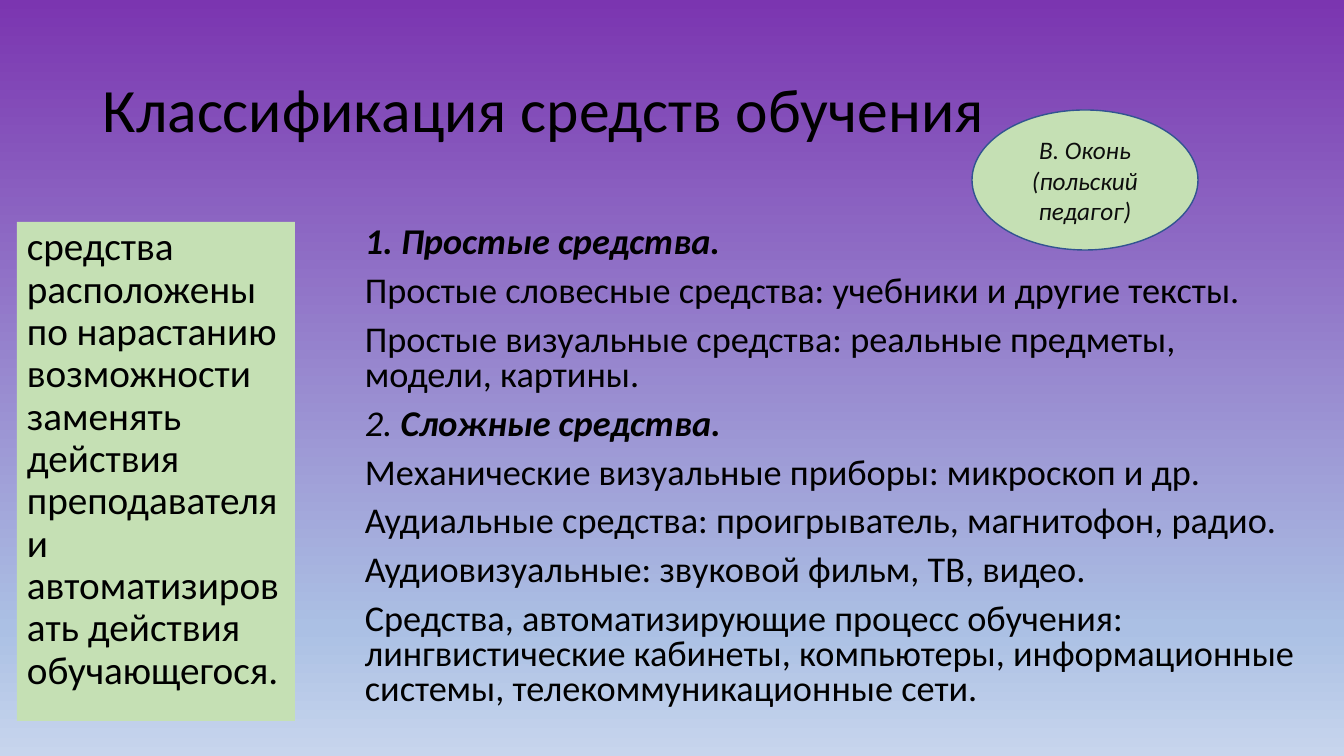
from dataclasses import dataclass

from lxml import etree
from pptx import Presentation
from pptx import util as u
from pptx.dml.color import RGBColor
from pptx.enum import shapes, text
from pptx.oxml.ns import qn

EMU_PER_PX = 12192000 / 1344


@dataclass(frozen=True)
class Theme:
    font: str = "Calibri"
    ink: str = "000000"
    soft_ink: str = "0D0D0D"
    panel: str = "C5E0B4"
    outline: str = "325491"
    backdrop: tuple = ((0, "7B35B0"), (83, "ABC0E4"), (100, "C7D5ED"))
    title_size: float = 44
    panel_size: float = 28
    list_size: float = 25.9
    author_size: float = 18


def px(*lengths):
    return [u.Emu(round(n * EMU_PER_PX)) for n in lengths]


def write(frame, paragraphs, *, font, size, color, align=text.PP_ALIGN.LEFT,
          anchor=text.MSO_ANCHOR.TOP, line=1.0, before=0):
    """Fill a frame; each paragraph is a list of (words, style), style from "b" and "i"."""
    frame.word_wrap = True
    frame.vertical_anchor = anchor
    for index, runs in enumerate(paragraphs):
        paragraph = frame.paragraphs[0] if index == 0 else frame.add_paragraph()
        paragraph.alignment = align
        paragraph.line_spacing = line
        paragraph.space_before = u.Pt(before)
        for words, style in runs:
            run = paragraph.add_run()
            run.text = words
            run.font.name = font
            run.font.size = u.Pt(size)
            run.font.color.rgb = RGBColor.from_string(color)
            run.font.bold = "b" in style
            run.font.italic = "i" in style


class SlideBuilder:
    def __init__(self, slide, theme):
        self.slide = slide
        self.theme = theme

    def backdrop(self):
        fill = self.slide.background.fill
        fill.gradient()
        fill.gradient_angle = 270
        stops = self.slide.element.find(".//" + qn("a:gsLst"))
        stops.clear()
        for percent, color in self.theme.backdrop:
            stop = etree.SubElement(stops, qn("a:gs"), pos=str(percent * 1000))
            etree.SubElement(stop, qn("a:srgbClr"), val=color)

    def text(self, box, paragraphs, **style):
        frame = self.slide.shapes.add_textbox(*px(*box)).text_frame
        write(frame, paragraphs, font=self.theme.font, color=self.theme.ink, **style)

    def shape(self, kind, box, paragraphs, *, outline=None, color=None, **style):
        shape = self.slide.shapes.add_shape(kind, *px(*box))
        shape.shadow.inherit = False
        shape.fill.solid()
        shape.fill.fore_color.rgb = RGBColor.from_string(self.theme.panel)
        if outline:
            shape.line.color.rgb = RGBColor.from_string(outline)
            shape.line.width = u.Pt(1)
        else:
            shape.line.fill.background()
        write(shape.text_frame, paragraphs, font=self.theme.font,
              color=color or self.theme.ink, **style)


TITLE = [[("Классификация средств обучения", "")]]
PRINCIPLE = [[("средства расположены по нарастанию возможности заменять действия "
               "преподавателя и автоматизировать действия обучающегося.", "")]]
AUTHOR = [[("В. Оконь (польский педагог)", "i")]]
CLASSES = [
    [("1. Простые средства.", "bi")],
    [("Простые словесные средства: учебники и другие тексты.", "")],
    [("Простые визуальные средства: реальные предметы, модели, картины.", "")],
    [("2. ", "i"), ("Сложные средства.", "bi")],
    [("Механические визуальные приборы: микроскоп и др.", "")],
    [("Аудиальные средства: проигрыватель, магнитофон, радио.", "")],
    [("Аудиовизуальные: звуковой фильм, ТВ, видео.", "")],
    [("Средства, автоматизирующие процесс обучения: лингвистические кабинеты, "
      "компьютеры, информационные системы, телекоммуникационные сети.", "")],
]


def main():
    deck = Presentation()
    deck.slide_width, deck.slide_height = px(1344, 756)
    theme = Theme()
    page = SlideBuilder(deck.slides.add_slide(deck.slide_layouts[6]), theme)
    kinds = shapes.MSO_SHAPE
    middle = text.MSO_ANCHOR.MIDDLE

    page.backdrop()
    page.text((93, 40, 1159, 146), TITLE, size=theme.title_size, anchor=middle, line=0.9)
    page.shape(kinds.RECTANGLE, (17, 222, 278, 499), PRINCIPLE,
               size=theme.panel_size, line=0.9, before=10)
    page.text((355, 222, 953, 499), CLASSES, size=theme.list_size, line=0.8, before=10)
    page.shape(kinds.OVAL, (972, 110, 226, 140), AUTHOR, outline=theme.outline,
               color=theme.soft_ink, size=theme.author_size,
               align=text.PP_ALIGN.CENTER, anchor=middle)
    deck.save("out.pptx")


if __name__ == "__main__":
    main()
